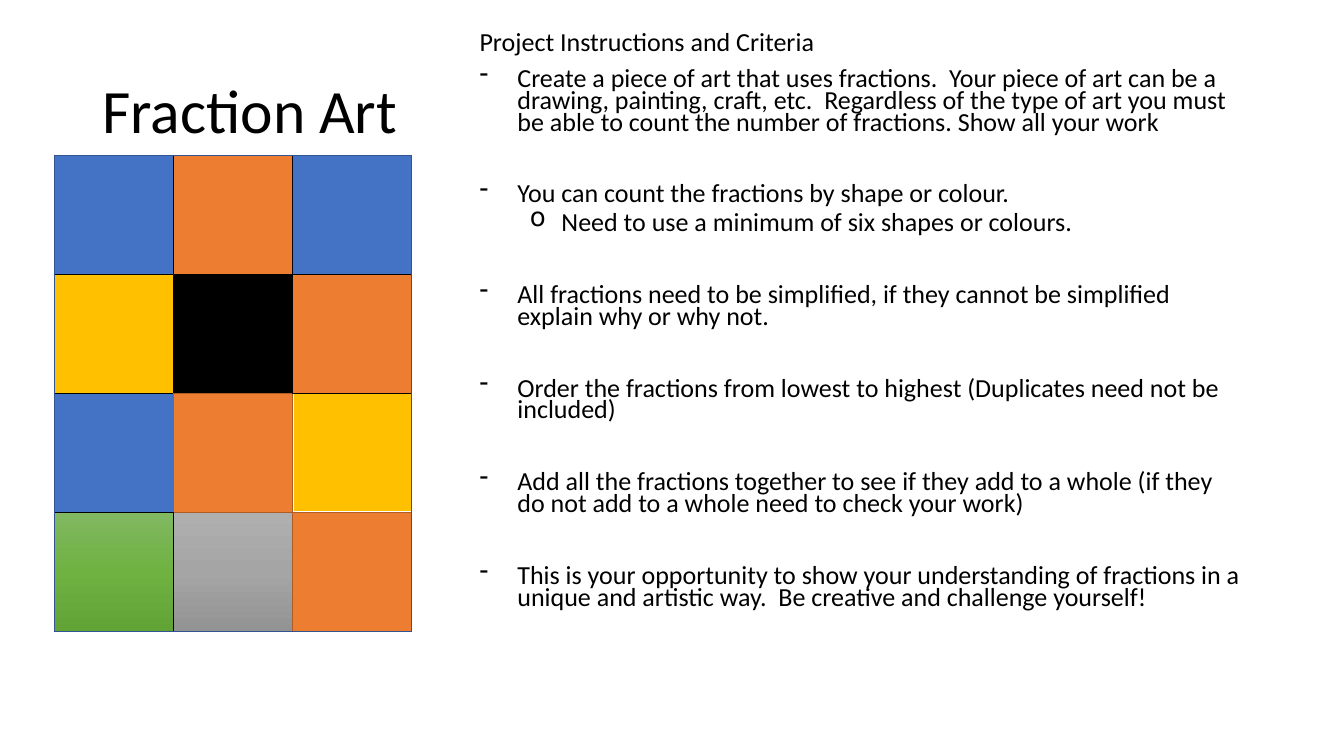
from copy import deepcopy
from pptx import Presentation
from pptx.dml.color import RGBColor as RGB
from pptx.enum.shapes import MSO_SHAPE as Shape
from pptx.enum.text import MSO_ANCHOR as Anchor
from pptx.oxml.ns import qn
from pptx.util import Pt
from lxml.etree import SubElement

BLACK = RGB(0x00, 0x00, 0x00)
WHITE = RGB(0xFF, 0xFF, 0xFF)
BLUE = RGB(0x44, 0x72, 0xC4)
NAVY = RGB(0x32, 0x54, 0x91)
ORANGE = RGB(0xED, 0x7D, 0x31)
RUST = RGB(0xAF, 0x5C, 0x24)
GOLD = RGB(0xFF, 0xC0, 0x00)
GRAY = RGB(0xA5, 0xA5, 0xA5)
GRAYS = (RGB(0xAF, 0xAF, 0xAF), GRAY, RGB(0x93, 0x93, 0x93))
GREENS = (RGB(0x81, 0xB8, 0x61), RGB(0x6F, 0xB2, 0x42), RGB(0x62, 0xA3, 0x36))

LEFT, TOP, SIDE = 39, 111, 85
COLS, ROWS = 3, 4

TILES = [
    (0, 0, BLUE, BLACK, 1),
    (1, 1, BLACK, BLACK, 1),
    (2, 0, BLUE, BLACK, 1),
    (3, 1, GRAYS, GRAY, 0.5),
    (0, 2, BLUE, NAVY, 1),
    (2, 2, GOLD, WHITE, 1.5),
    (0, 1, ORANGE, BLACK, 1),
    (1, 0, GOLD, BLACK, 1),
    (3, 2, ORANGE, RUST, 1),
    (2, 1, ORANGE, RUST, 1),
    (3, 0, GREENS, BLACK, 0.5),
    (1, 2, ORANGE, BLACK, 1),
]

GAP = 35.6
STEPS = [
    ("Project Instructions and Criteria", "", 10),
    ("Create a piece of art that uses fractions.  Your piece of art can be a "
     "drawing, painting, craft, etc.  Regardless of the type of art you must "
     "be able to count the number of fractions. Show all your work", "-", 10),
    ("You can count the fractions by shape or colour.", "-", GAP),
    ("Need to use a minimum of six shapes or colours.", "o", 5),
    ("All fractions need to be simplified, if they cannot be simplified "
     "explain why or why not.", "-", GAP),
    ("Order the fractions from lowest to highest (Duplicates need not be "
     "included)", "-", GAP),
    ("Add all the fractions together to see if they add to a whole (if they "
     "do not add to a whole need to check your work)", "-", GAP),
    ("This is your opportunity to show your understanding of fractions in a "
     "unique and artistic way.  Be creative and challenge yourself!", "-", GAP),
]
INDENTS = {"-": (27, -27), "o": (58.5, -22.5)}


class Pen:
    def __init__(self, slide, font, color):
        self.slide = slide
        self.font = font
        self.color = color

    def box(self, x, y, w, h, anchor=Anchor.TOP):
        shape = self.slide.shapes.add_textbox(Pt(x), Pt(y), Pt(w), Pt(h))
        frame = shape.text_frame
        frame.word_wrap = True
        frame.vertical_anchor = anchor
        return frame

    def line(self, para, text, size, pitch, before=0, mark=""):
        para.line_spacing = pitch
        para.space_before = Pt(before)
        if mark:
            left, hang = INDENTS[mark]
            para.level = 1 if mark == "o" else 0
            props = para._p.get_or_add_pPr()
            props.set("marL", str(Pt(left)))
            props.set("indent", str(Pt(hang)))
            SubElement(props, qn("a:buChar")).set("char", mark)
        run = para.add_run()
        run.text = text
        run.font.size = Pt(size)
        run.font.name = self.font
        run.font.color.rgb = self.color

    def rect(self, x, y, w, h, fill, edge, width):
        shape = self.slide.shapes.add_shape(
            Shape.RECTANGLE, Pt(x), Pt(y), Pt(w), Pt(h))
        shape.shadow.inherit = False
        shape.line.color.rgb = edge
        shape.line.width = Pt(width)
        if fill is None:
            shape.fill.background()
        elif isinstance(fill, RGB):
            shape.fill.solid()
            shape.fill.fore_color.rgb = fill
        else:
            self.fade(shape, fill)

    def fade(self, shape, tones):
        shape.fill.gradient()
        shape.fill.gradient_angle = 270
        stops = shape._element.xpath(".//a:gsLst")[0]
        stops.insert(1, deepcopy(stops[0]))
        for i, (stop, tone) in enumerate(zip(shape.fill.gradient_stops, tones)):
            stop.position = i / 2
            stop.color.rgb = tone


def main():
    deck = Presentation()
    deck.slide_width, deck.slide_height = Pt(960), Pt(540)
    pen = Pen(deck.slides.add_slide(deck.slide_layouts[6]), "Calibri", BLACK)

    title = pen.box(66, 28.75, 828, 104.4, Anchor.MIDDLE)
    pen.line(title.paragraphs[0], "Fraction Art", 44, 0.9)

    body = pen.box(335.5, 20.9, 558.7, 465.8)
    for i, (text, mark, before) in enumerate(STEPS):
        para = body.add_paragraph() if i else body.paragraphs[0]
        pen.line(para, text, 18.6, 0.7, before, mark)

    for row, col, fill, edge, width in TILES:
        pen.rect(LEFT + col * SIDE, TOP + row * SIDE, SIDE, SIDE,
                 fill, edge, width)
    pen.rect(LEFT, TOP, COLS * SIDE, ROWS * SIDE, None, NAVY, 1)

    deck.save("out.pptx")


if __name__ == "__main__":
    main()
